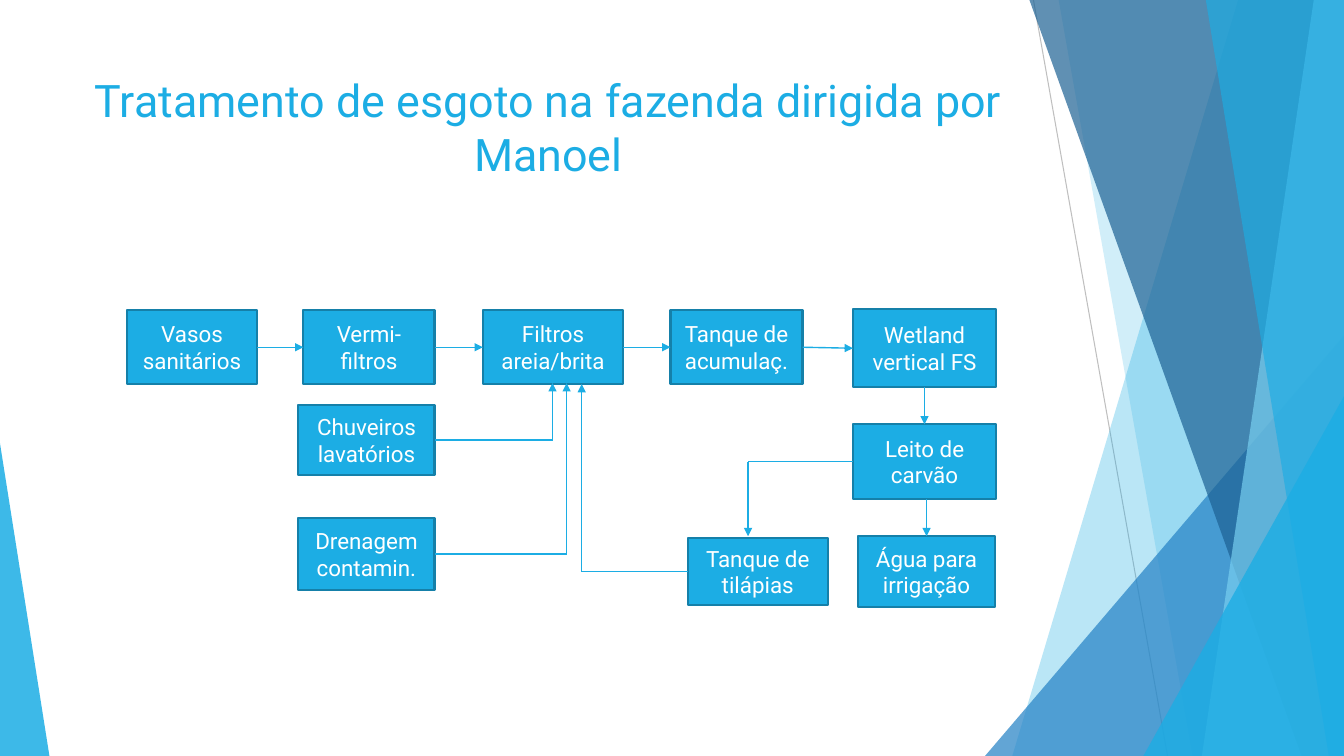
"""Build the slide on sewage treatment at the farm."""
from pptx import Presentation
from pptx.dml.color import RGBColor
from pptx.enum.shapes import MSO_CONNECTOR as Conn, MSO_SHAPE as Kind
from pptx.enum.text import MSO_ANCHOR as Anchor, MSO_AUTO_SIZE as Fit, PP_ALIGN as Align
from pptx.oxml.ns import qn
from pptx.util import Inches, Pt
from lxml.etree import SubElement as Sub

SKY = RGBColor(0x1C, 0xAD, 0xE4)
EDGE = RGBColor(0x15, 0x80, 0xA9)
BLUE = RGBColor(0x26, 0x83, 0xC6)
NAVY = RGBColor(0x1D, 0x62, 0x94)
PALE = RGBColor(0x77, 0xCE, 0xEF)
GREY = RGBColor(0xBF, 0xBF, 0xBF)
WHITE = RGBColor(0xFF, 0xFF, 0xFF)
TOP, LEFT, BOTTOM, RIGHT = range(4)

ROW, TALL = 3.08, 0.73
BOXES = {
    "vasos": ("Vasos sanitários", 1.26, ROW, 1.29, TALL),
    "vermi": ("Vermi-filtros", 3.01, ROW, 1.3, TALL),
    "filtros": ("Filtros areia/brita", 4.79, ROW, 1.39, TALL),
    "acumula": ("Tanque de acumulaç.", 6.65, ROW, 1.31, TALL),
    "wetland": ("Wetland vertical FS", 8.46, 3.07, 1.42, 0.77),
    "leito": ("Leito de carvão", 8.46, 4.21, 1.42, 0.74),
    "agua": ("Água para irrigação", 8.51, 5.32, 1.36, 0.7),
    "tilapias": ("Tanque de tilápias", 6.82, 5.34, 1.39, 0.66),
    "chuveiros": ("Chuveiros lavatórios", 2.96, 4.02, 1.35, 0.69),
    "drenagem": ("Drenagem contamin.", 2.96, 5.14, 1.35, 0.71),
}


def write(shape, text, size=16, color=WHITE, anchor=Anchor.MIDDLE):
    """Put centred, wrapped text in a shape."""
    frame = shape.text_frame
    frame.word_wrap = True
    frame.auto_size = Fit.NONE
    frame.vertical_anchor = anchor
    para = frame.paragraphs[0]
    para.alignment = Align.CENTER
    run = para.add_run()
    run.text = text
    run.font.name = "Roboto"
    run.font.size = Pt(size)
    run.font.color.rgb = color


def tint(shape, color, alpha):
    """Fill a shape with a see-through colour and no outline."""
    shape.shadow.inherit = False
    shape.line.fill.background()
    shape.fill.solid()
    shape.fill.fore_color.rgb = color
    tone = shape.fill._xPr.find(".//" + qn("a:srgbClr"))
    Sub(tone, qn("a:alpha"), val=str(alpha * 1000))


def facet(slide, points, color, alpha):
    """Draw a see-through polygon."""
    start, *rest = [(Inches(x), Inches(y)) for x, y in points]
    pen = slide.shapes.build_freeform(*start, scale=1.0)
    pen.add_line_segments(rest, close=True)
    tint(pen.convert_to_shape(), color, alpha)


def wedge(slide, area, peak, color, alpha):
    """Draw a see-through triangle with its peak at a share of its width."""
    shape = slide.shapes.add_shape(Kind.ISOSCELES_TRIANGLE, *map(Inches, area))
    shape.adjustments[0] = peak
    tint(shape, color, alpha)


def box(slide, text, *area):
    """Draw a labelled step."""
    shape = slide.shapes.add_shape(Kind.RECTANGLE, *map(Inches, area))
    shape.shadow.inherit = False
    shape.fill.solid()
    shape.fill.fore_color.rgb = SKY
    shape.line.color.rgb = EDGE
    shape.line.width = Pt(1.5)
    write(shape, text)
    return shape


def line(slide, start, end, color=SKY, width=1, arrow=False):
    """Draw a straight line between two points."""
    wire = slide.shapes.add_connector(Conn.STRAIGHT, *start, *end)
    wire.line.color.rgb = color
    wire.line.width = Pt(width)
    Sub(wire._element.spPr, qn("a:effectLst"))
    if arrow:
        Sub(wire.line._get_or_add_ln(), qn("a:tailEnd"), type="triangle")
    return wire


def link(slide, first, out, last, into):
    """Join the sides of two steps with an arrow."""
    wire = line(slide, (0, 0), (0, 0), arrow=True)
    wire.begin_connect(first, out)
    wire.end_connect(last, into)


def elbow(slide, step, side, x, y):
    """Lead from the side of a step to column x, then by arrow to height y."""
    bend = Inches(x), step.top + step.height // 2
    line(slide, bend, bend).begin_connect(step, side)
    line(slide, bend, (bend[0], Inches(y)), arrow=True)


def decor(slide):
    """Draw the facets at both edges."""
    line(slide, (Inches(10.25), 0), (Inches(11.58), Inches(7.5)), GREY, 0.75)
    facet(slide, [(12.28, 0), (13.33, 0), (13.33, 7.5), (10.04, 7.5)], SKY, 30)
    facet(slide, [(10.5, 0), (13.33, 0), (13.33, 7.5), (11.83, 7.5)], SKY, 20)
    wedge(slide, (9.77, 3.33, 3.56, 4.17), 1, BLUE, 72)
    facet(slide, [(10.21, 0), (13.33, 0), (13.33, 7.5), (12.91, 7.5)], NAVY, 70)
    facet(slide, [(13.03, 0), (13.33, 0), (13.33, 7.5), (11.92, 7.5)], PALE, 70)
    facet(slide, [(11.96, 0), (13.33, 0), (13.33, 7.5), (13.18, 7.5)], SKY, 65)
    wedge(slide, (11.34, 3.93, 1.99, 3.57), 1, SKY, 80)
    wedge(slide, (0, 4.4, 0.49, 3.1), 0, SKY, 85)


def head(slide, text):
    """Place and fill the title."""
    title = slide.shapes.title
    title.left, title.top = Inches(0.74), Inches(0.67)
    title.width, title.height = Inches(9.4), Inches(1.44)
    write(title, text, size=32, color=SKY, anchor=Anchor.TOP)


def flow(slide):
    """Draw the steps and the arrows between them."""
    steps = {name: box(slide, *data) for name, data in BOXES.items()}
    row = [steps[name] for name in ("vasos", "vermi", "filtros", "acumula", "wetland")]
    for first, last in zip(row, row[1:]):
        link(slide, first, RIGHT, last, LEFT)
    link(slide, steps["wetland"], BOTTOM, steps["leito"], TOP)
    drop = Inches(9.19), Inches(4.95)
    line(slide, drop, drop, arrow=True).end_connect(steps["agua"], TOP)
    elbow(slide, steps["leito"], LEFT, 7.42, 5.32)
    elbow(slide, steps["chuveiros"], RIGHT, 5.48, 3.8)
    elbow(slide, steps["drenagem"], RIGHT, 5.62, 3.8)
    elbow(slide, steps["tilapias"], LEFT, 5.77, 3.81)


def main():
    """Build and save the deck."""
    deck = Presentation()
    deck.slide_width, deck.slide_height = Inches(13.33), Inches(7.5)
    slide = deck.slides.add_slide(deck.slide_layouts[5])
    decor(slide)
    head(slide, "Tratamento de esgoto na fazenda dirigida por Manoel")
    flow(slide)
    deck.save("out.pptx")


if __name__ == "__main__":
    main()
